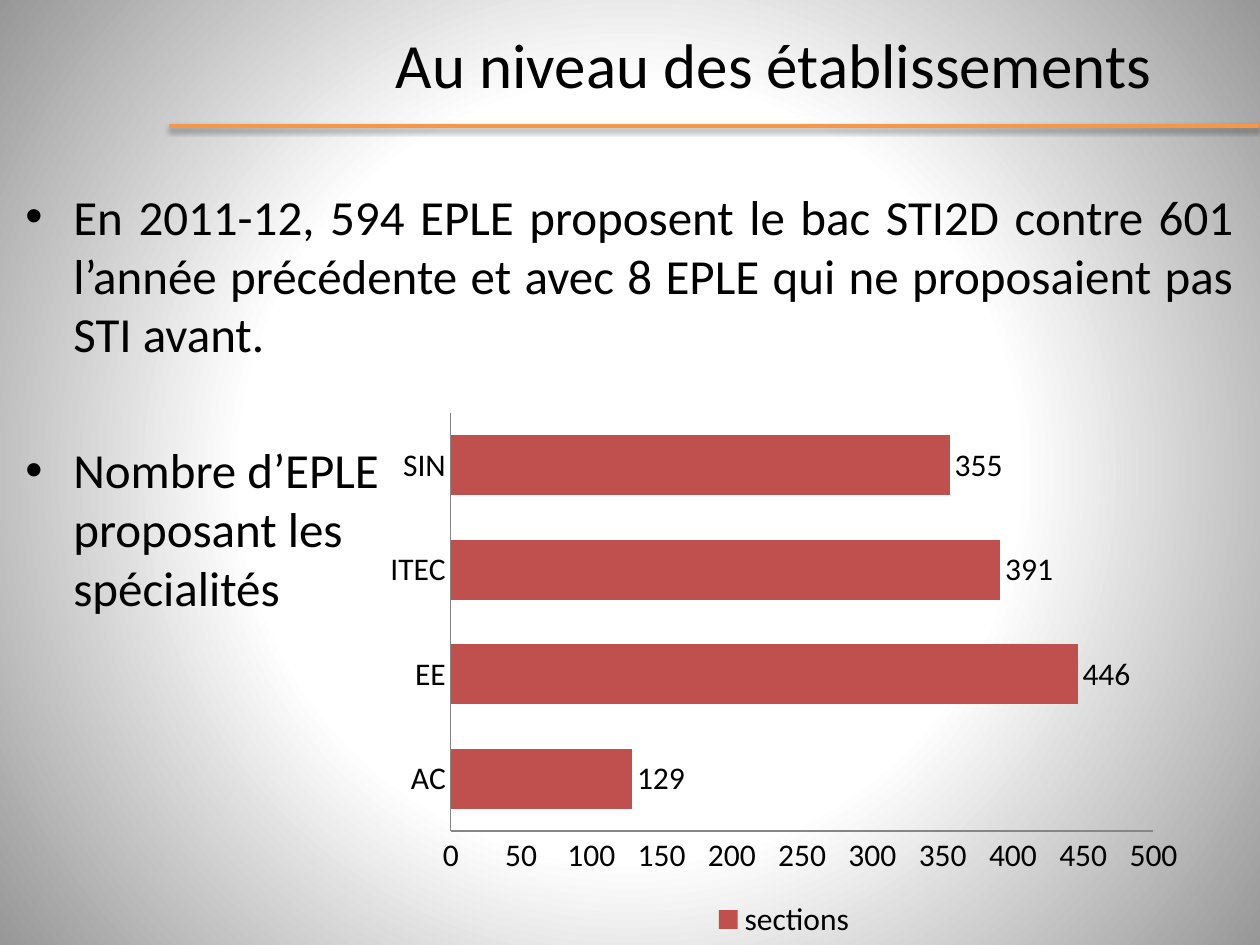
from lxml.etree import SubElement
from pptx import Presentation
from pptx.chart.data import CategoryChartData
from pptx.dml.color import RGBColor
from pptx.enum.chart import XL_CHART_TYPE, XL_LABEL_POSITION, XL_LEGEND_POSITION, XL_TICK_MARK
from pptx.enum.shapes import MSO_CONNECTOR
from pptx.enum.text import MSO_ANCHOR, PP_ALIGN
from pptx.oxml import parse_xml
from pptx.oxml.ns import nsdecls, qn
from pptx.util import Pt

COLORS = {"text": "000000", "rule": "F79646", "bar": "C0504D",
          "axis": "868686", "center": "FFFFFF", "edge": "979797"}
EMU_PER_PX = 914400 / 126


def px(value):
    return round(value * EMU_PER_PX)


def color(name):
    return RGBColor.from_string(COLORS[name])


def apply_format(target, values):
    for name, value in values.items():
        setattr(target, name, value)


class PageBuilder:
    font_name = "Calibri"

    def __init__(self, deck):
        self.page = deck.slides.add_slide(deck.slide_layouts[6])

    def style_font(self, font, size):
        apply_format(font, {"name": self.font_name, "size": Pt(size)})
        font.color.rgb = color("text")

    def background(self):
        fill = self.page.background.fill
        fill.gradient()
        for stop, name, position in zip(fill.gradient_stops, ("center", "edge"), (0.49, 1)):
            stop.color.rgb = color(name)
            stop.position = position
        gradient = self.page.background._cSld.find(".//" + qn("a:gradFill"))
        gradient.remove(gradient.find(qn("a:lin")))
        gradient.append(parse_xml(
            f'<a:path {nsdecls("a")} path="circle">'
            '<a:fillToRect l="50000" t="50000" r="50000" b="50000"/></a:path>'))

    def rule(self, left, top, right):
        line = self.page.shapes.add_connector(
            MSO_CONNECTOR.STRAIGHT, px(left), px(top), px(right), px(top))
        line.line.color.rgb = color("rule")
        line.line.width = Pt(2)
        line._element.spPr.append(parse_xml(
            f'<a:effectLst {nsdecls("a")}>'
            '<a:outerShdw blurRad="40000" dist="20000" dir="5400000" rotWithShape="0">'
            '<a:srgbClr val="000000"><a:alpha val="38000"/></a:srgbClr>'
            '</a:outerShdw></a:effectLst>'))

    def bullet(self, para, indent):
        properties = para._p.get_or_add_pPr()
        properties.set("marL", str(px(indent)))
        properties.set("indent", str(-px(indent)))
        SubElement(properties, qn("a:buFont")).set("typeface", "Arial")
        SubElement(properties, qn("a:buChar")).set("char", "•")

    def text(self, area, paragraphs, size, anchor=MSO_ANCHOR.TOP, indent=0):
        box = self.page.shapes.add_textbox(*map(px, area))
        frame = box.text_frame
        apply_format(frame, {"word_wrap": True, "vertical_anchor": anchor})
        for index, (words, values) in enumerate(paragraphs):
            para = frame.add_paragraph() if index else frame.paragraphs[0]
            para.text = words
            if indent:
                self.bullet(para, indent)
            apply_format(para, values)
            for span in para.runs:
                self.style_font(span.font, size)

    def bar_chart(self, area, name, values, size):
        data = CategoryChartData()
        data.categories = list(values)
        data.add_series(name, list(values.values()))
        chart = self.page.shapes.add_chart(
            XL_CHART_TYPE.BAR_CLUSTERED, *map(px, area), data).chart
        apply_format(chart, {"has_title": False, "has_legend": True})
        self.style_font(chart.font, size)
        apply_format(chart.legend, {"position": XL_LEGEND_POSITION.BOTTOM,
                                    "include_in_layout": False})
        for axis in (chart.category_axis, chart.value_axis):
            apply_format(axis, {"major_tick_mark": XL_TICK_MARK.NONE,
                                "minor_tick_mark": XL_TICK_MARK.NONE,
                                "has_major_gridlines": False})
            axis.format.line.color.rgb = color("axis")
        apply_format(chart.value_axis, {"minimum_scale": 0, "maximum_scale": 500,
                                        "major_unit": 50})
        plot = chart.plots[0]
        apply_format(plot, {"gap_width": 75, "vary_by_categories": False,
                            "has_data_labels": True})
        apply_format(plot.data_labels, {"show_value": True,
                                        "position": XL_LABEL_POSITION.OUTSIDE_END})
        fill = plot.series[0].format.fill
        fill.solid()
        fill.fore_color.rgb = color("bar")


def main():
    deck = Presentation()
    apply_format(deck, {"slide_width": px(1260), "slide_height": px(945)})
    builder = PageBuilder(deck)
    builder.background()
    builder.rule(169, 126, 1259)
    builder.text((287, 0, 973, 126),
                 [("Au niveau des établissements", {"alignment": PP_ALIGN.CENTER})],
                 36, MSO_ANCHOR.MIDDLE)
    builder.text((13, 180, 1233, 333), [
        ("En 2011-12, 594 EPLE proposent le bac STI2D contre 601 l’année précédente "
         "et avec 8 EPLE qui ne proposaient pas STI avant.",
         {"alignment": PP_ALIGN.JUSTIFY}),
        ("Nombre d’EPLE\vproposant les\vspécialités",
         {"alignment": PP_ALIGN.LEFT, "space_before": Pt(44)}),
    ], 28, indent=48)
    builder.bar_chart((374, 402, 820, 543), "sections",
                      {"AC": 129, "EE": 446, "ITEC": 391, "SIN": 355}, 18)
    deck.save("out.pptx")


if __name__ == "__main__":
    main()
